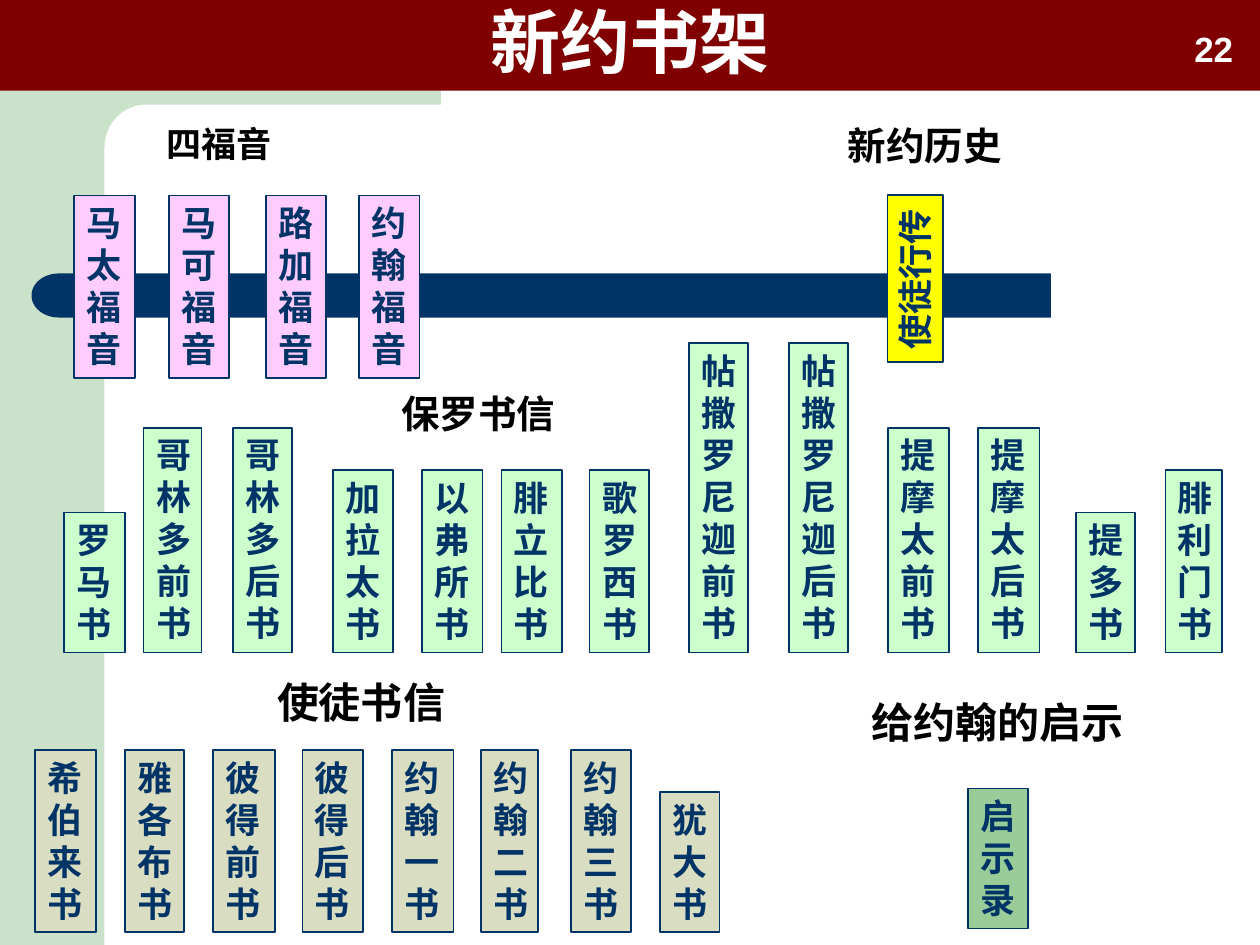
from pptx import Presentation
from pptx.dml.color import RGBColor
from pptx.enum.shapes import MSO_SHAPE
from pptx.enum.text import MSO_ANCHOR, MSO_AUTO_SIZE, PP_ALIGN
from pptx.oxml.ns import qn
from pptx.util import Inches, Pt
from lxml import etree

RECTANGLE, ROUNDED = MSO_SHAPE.RECTANGLE, MSO_SHAPE.ROUNDED_RECTANGLE
DELAY = MSO_SHAPE.FLOWCHART_DELAY
TOP, MIDDLE = MSO_ANCHOR.TOP, MSO_ANCHOR.MIDDLE
LEFT, CENTER = PP_ALIGN.LEFT, PP_ALIGN.CENTER
NO_AUTOFIT = MSO_AUTO_SIZE.NONE

WHITE = RGBColor(0xFF, 0xFF, 0xFF)
BLACK = RGBColor(0x00, 0x00, 0x00)
NAVY = RGBColor(0x00, 0x33, 0x66)
MAROON = RGBColor(0x80, 0x00, 0x00)
PALE_GREEN = RGBColor(0xCA, 0xE2, 0xCA)
PINK = RGBColor(0xFF, 0xCC, 0xFF)
YELLOW = RGBColor(0xFF, 0xFF, 0x00)
MINT = RGBColor(0xCC, 0xFF, 0xCC)
SAND = RGBColor(0xD9, 0xDD, 0xC1)
GREEN = RGBColor(0x99, 0xCC, 0x99)

CHINESE_FONT = "Noto Sans CJK SC"
LINE_HEIGHT = 0.337
TEXT_MARGINS = 0.1


def write_text(shape, lines, size, color, alignment=LEFT, anchor=TOP,
               wrap=True, font_name=CHINESE_FONT):
    """Write one bold paragraph per line, in the same Latin and East Asian font."""
    frame = shape.text_frame
    frame.text = "\n".join(lines)
    frame.word_wrap = wrap
    frame.auto_size = NO_AUTOFIT
    frame.vertical_anchor = anchor
    for paragraph in frame.paragraphs:
        paragraph.alignment = alignment
        font = paragraph.font
        font.name, font.size, font.bold = font_name, Pt(size), True
        font.color.rgb = color
        properties = paragraph._p.pPr.find(qn("a:defRPr"))
        latin = properties.find(qn("a:latin"))
        east_asian = etree.Element(qn("a:ea"), typeface=font_name)
        latin.addnext(east_asian)


def add_block(kind, left, top, width, height, fill, line=None):
    shape = slide.shapes.add_shape(
        kind, Inches(left), Inches(top), Inches(width), Inches(height))
    shape.shadow.inherit = False
    shape.fill.solid()
    shape.fill.fore_color.rgb = fill
    if line is None:
        shape.line.fill.background()
    else:
        shape.line.color.rgb = line
        shape.line.width = Pt(1)
    return shape


presentation = Presentation()
presentation.slide_width = Inches(10)
presentation.slide_height = Inches(7.5)
slide = presentation.slides.add_slide(presentation.slide_layouts[5])

# Background and navy bar
add_block(RECTANGLE, 0, 0, 0.83, 7.5, PALE_GREEN)
add_block(RECTANGLE, 0.75, 0, 2.75, 1.17, PALE_GREEN)
corner = add_block(ROUNDED, 0.83, 0.83, 5.58, 0.67, WHITE)
corner.adjustments[0] = 0.5
bar = add_block(ROUNDED, 0.67, 2.17, 7.67, 0.35, NAVY)
bar.adjustments[0] = 0
bar_end = add_block(DELAY, 0.25, 2.17, 0.43, 0.35, NAVY)
bar_end.rotation = 180

# Title band, in front of the background
title = slide.shapes.title
slide.shapes._spTree.append(title._element)
title.left, title.top = Inches(0), Inches(0)
title.width, title.height = Inches(10), Inches(0.72)
title.fill.solid()
title.fill.fore_color.rgb = MAROON
write_text(title, ["新约书架"], 40, WHITE, CENTER, MIDDLE)
title.text_frame.paragraphs[0].line_spacing = 0.9

page_number = slide.shapes.add_textbox(
    Inches(9.38), Inches(0.17), Inches(0.51), Inches(0.44))
write_text(page_number, ["22"], 20, WHITE, wrap=False, font_name="Arial")

# The book of history lies on its side
acts = add_block(RECTANGLE, 6.6, 1.99, 1.33, 0.44, YELLOW, NAVY)
acts.rotation = 270
write_text(acts, ["使徒行传"], 20, NAVY, wrap=False)

# Shelves: bottom edge, colour, books as (left, width, lines parted by spaces)
shelves = [
    (3.0, PINK, [
        (0.59, 0.48, "马 太 福 音"),
        (1.34, 0.48, "马 可 福 音"),
        (2.11, 0.48, "路 加 福 音"),
        (2.85, 0.48, "约 翰 福 音"),
    ]),
    (5.18, MINT, [
        (0.51, 0.48, "罗 马 书"),
        (1.14, 0.46, "哥林多前书"),
        (1.85, 0.47, "哥林 多后 书"),
        (2.64, 0.48, "加 拉 太 书"),
        (3.35, 0.48, "以 弗 所 书"),
        (3.98, 0.48, "腓 立 比 书"),
        (4.68, 0.47, "歌罗 西书"),
        (5.47, 0.47, "帖 撒 罗 尼 迦 前 书"),
        (6.26, 0.47, "帖撒罗尼迦后书"),
        (7.05, 0.48, "提 摩 太 前 书"),
        (7.76, 0.49, "提 摩 太 后 书"),
        (8.54, 0.47, "提 多 书"),
        (9.25, 0.45, "腓利门书"),
    ]),
    (7.4, SAND, [
        (0.28, 0.48, "希 伯 来 书"),
        (0.99, 0.47, "雅各布 书"),
        (1.69, 0.49, "彼 得 前 书"),
        (2.4, 0.48, "彼 得 后 书"),
        (3.11, 0.49, "约 翰 一 书"),
        (3.82, 0.45, "约翰二书"),
        (4.53, 0.48, "约 翰 三 书"),
        (5.24, 0.47, "犹大 书"),
    ]),
    (7.37, GREEN, [(7.68, 0.48, "启 示 录")]),
]
for bottom, color, books in shelves:
    for left, width, name in books:
        lines = name.split()
        height = TEXT_MARGINS + LINE_HEIGHT * len("".join(lines))
        book = add_block(RECTANGLE, left, bottom - height, width, height, color, NAVY)
        write_text(book, lines, 20, NAVY)

# Shelf headings
headings = [
    ("四福音", 1.22, 0.92, 1.04, 0.44, 20),
    ("新约历史", 6.5, 0.92, 1.68, 0.47, 22),
    ("保罗书信", 1.46, 3.05, 4.67, 0.47, 22),
    ("使徒书信", 2.09, 5.32, 1.55, 0.5, 24),
    ("给约翰的启示", 6.81, 5.48, 2.22, 0.5, 24),
]
for text, left, top, width, height, size in headings:
    heading = slide.shapes.add_textbox(
        Inches(left), Inches(top), Inches(width), Inches(height))
    write_text(heading, [text], size, BLACK, CENTER, wrap=False)

presentation.save("out.pptx")
